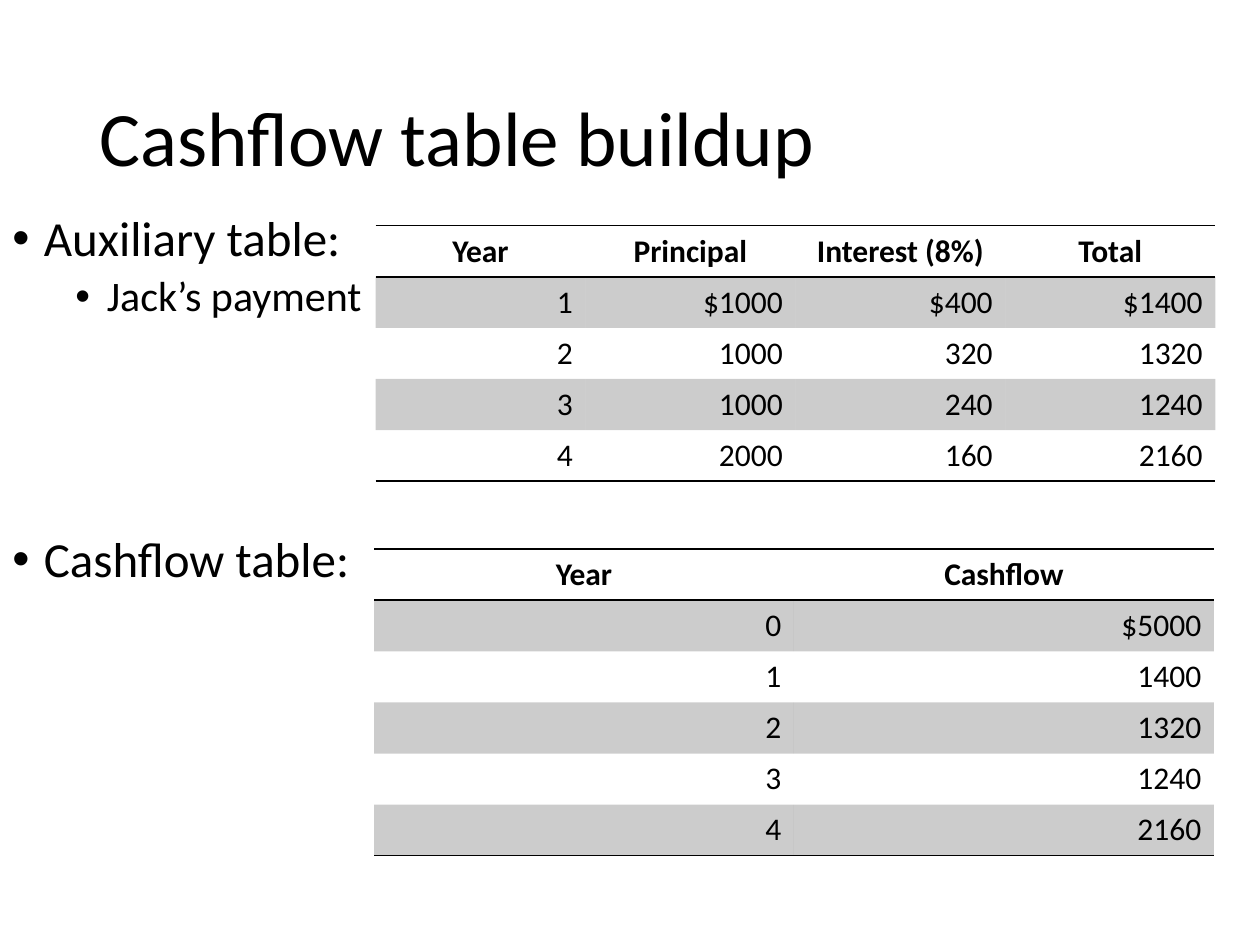
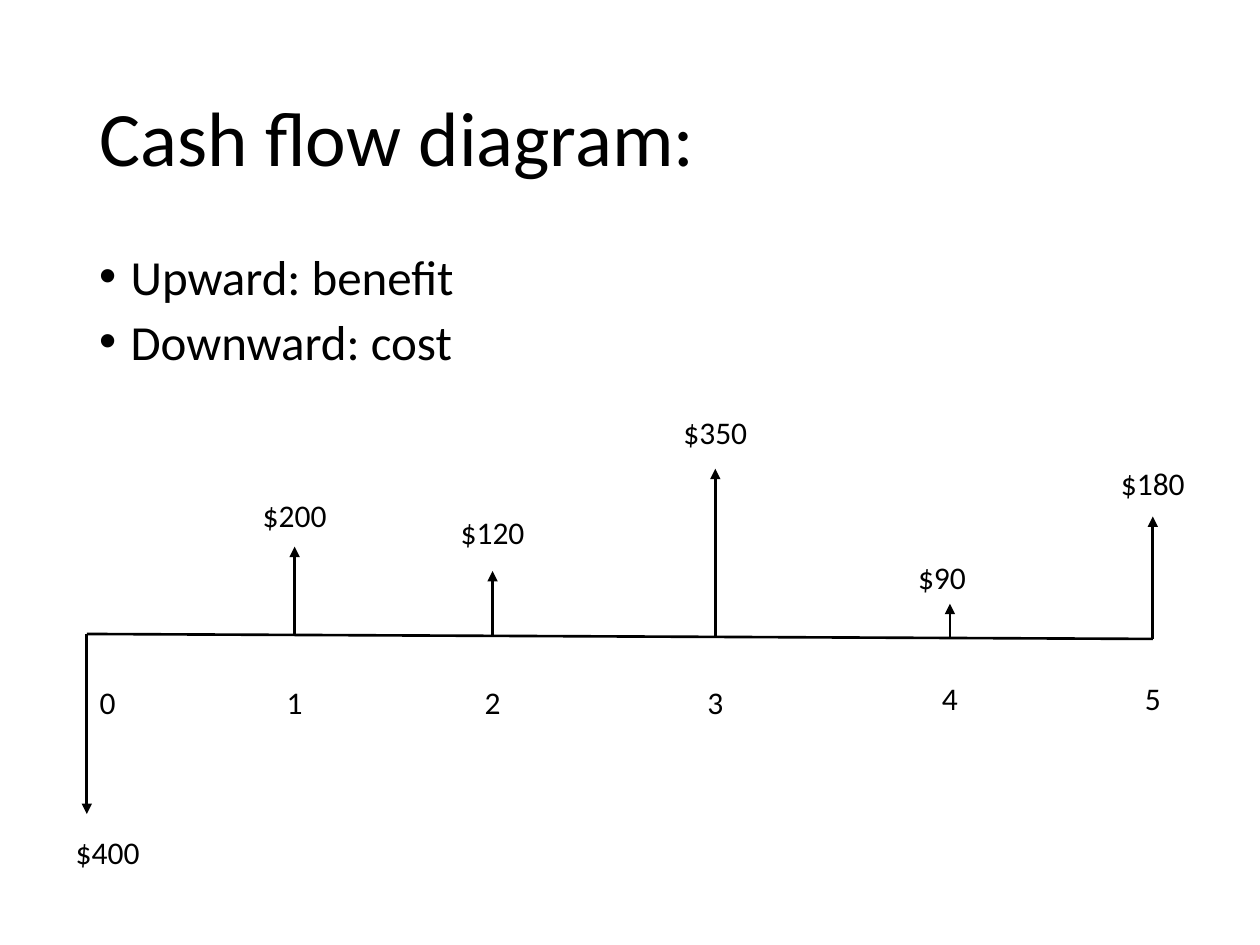
from typing import NamedTuple

from lxml import etree
from pptx import Presentation
from pptx import util as u
from pptx.dml import color
from pptx.enum import shapes, text
from pptx.oxml import ns

Cm = u.Cm
FONT = "Calibri"
COLOURS = {"ink": "000000", "paper": "FFFFFF"}
INK = color.RGBColor.from_string(COLOURS["ink"])
PLAIN_TABLE_STYLE = "{2D5ABB26-0587-4C30-8999-92F81FD0307C}"
BAND_OPACITY = 20
ROW_HEIGHT = 1.03
TABLE_WIDTH = 16.93
BODY_WIDTH = 21.9
MARGIN = 1.75


class Bullet(NamedTuple):
    words: str
    level: int = 0


class BulletList(NamedTuple):
    left: float
    top: float
    height: float
    bullets: list[Bullet]
    line_spacing: float = 0.9


class DataTable(NamedTuple):
    left: float
    top: float
    rows: list[list[str]]


class CashFlow(NamedTuple):
    year: str
    x: float
    year_top: float
    tip: float
    amount: str
    amount_top: float
    year_shift: float = 0
    amount_shift: float = 0


class Point(NamedTuple):
    x: float
    y: float


AUXILIARY_LIST = BulletList(
    0, 4.19, 3.45, [Bullet("Auxiliary table:"), Bullet("Jack’s payment", 1)])
CASHFLOW_LIST = BulletList(0, 10.67, 1.45, [Bullet("Cashflow table:")])
DIRECTION_LIST = BulletList(
    MARGIN, 5.08, 2.62, [Bullet("Upward: benefit"), Bullet("Downward: cost")], 0.8)

AUXILIARY_TABLE = DataTable(7.57, 4.55, [
    ["Year", "Principal", "Interest (8%)", "Total"],
    ["1", "$1000", "$400", "$1400"],
    ["2", "1000", "320", "1320"],
    ["3", "1000", "240", "1240"],
    ["4", "2000", "160", "2160"],
])
CASHFLOW_TABLE = DataTable(7.54, 11.07, [
    ["Year", "Cashflow"],
    ["0", "$5000"],
    ["1", "1400"],
    ["2", "1320"],
    ["3", "1240"],
    ["4", "2160"],
])

AXIS_START, AXIS_END = Point(MARGIN, 12.78), Point(23.24, 12.88)
CASH_FLOWS = [
    CashFlow("0", 1.75, 13.64, 16.41, "$400", 16.66, 0.42, 0.42),
    CashFlow("1", 5.94, 13.64, 11.02, "$200", 9.88),
    CashFlow("2", 9.93, 13.64, 11.51, "$120", 10.21),
    CashFlow("3", 14.42, 13.64, 9.45, "$350", 8.2),
    CashFlow("4", 19.15, 13.56, 12.17, "$90", 11.13, 0, -0.16),
    CashFlow("5", 23.24, 13.56, 10.41, "$180", 9.22),
]


# Text
def style_paragraph(paragraph, size: float, bold: bool = False) -> None:
    for font in (paragraph.font, *(run.font for run in paragraph.runs)):
        font.name, font.size, font.bold = FONT, u.Pt(size), bold
        font.color.rgb = INK


def add_titled_slide(presentation, words: str):
    slide = presentation.slides.add_slide(presentation.slide_layouts[5])
    slide.background.fill.solid()
    slide.background.fill.fore_color.rgb = color.RGBColor.from_string(COLOURS["paper"])
    title = slide.shapes.title
    title.left, title.top = Cm(MARGIN), Cm(1.02)
    title.width, title.height = Cm(BODY_WIDTH), Cm(3.68)
    frame = title.text_frame
    frame.text = words
    frame.auto_size = text.MSO_AUTO_SIZE.NONE
    frame.vertical_anchor = text.MSO_ANCHOR.MIDDLE
    paragraph = frame.paragraphs[0]
    paragraph.alignment = text.PP_ALIGN.LEFT
    paragraph.line_spacing = 0.9
    style_paragraph(paragraph, 44)
    return slide


def add_bullet_list(slide, item: BulletList) -> None:
    box = slide.shapes.add_textbox(
        Cm(item.left), Cm(item.top), Cm(BODY_WIDTH), Cm(item.height))
    frame = box.text_frame
    frame.word_wrap = True
    frame.text = "\n".join(bullet.words for bullet in item.bullets)
    for paragraph, bullet in zip(frame.paragraphs, item.bullets):
        paragraph.level = bullet.level
        paragraph.line_spacing = item.line_spacing
        paragraph.space_before = u.Pt(5 if bullet.level else 10)
        properties = paragraph._p.get_or_add_pPr()
        properties.set("marL", str(u.Inches(0.25 + 0.5 * bullet.level)))
        properties.set("indent", str(-u.Inches(0.25)))
        etree.SubElement(properties, ns.qn("a:buFont"), typeface="Arial")
        etree.SubElement(properties, ns.qn("a:buChar"), char="•")
        style_paragraph(paragraph, 24 if bullet.level else 28)


def add_label(slide, words: str, centre: float, top: float, width: float) -> None:
    box = slide.shapes.add_textbox(
        Cm(centre - width / 2), Cm(top), Cm(width), Cm(1.02))
    frame = box.text_frame
    frame.text = words
    frame.word_wrap = False
    frame.auto_size = text.MSO_AUTO_SIZE.SHAPE_TO_FIT_TEXT
    frame.paragraphs[0].alignment = text.PP_ALIGN.CENTER
    style_paragraph(frame.paragraphs[0], 18)


# Tables
def set_borders(cell, sides: list[str]) -> None:
    properties = cell._tc.get_or_add_tcPr()
    for position, side in enumerate(sides):
        line = etree.Element(ns.qn(f"a:ln{side}"), w=str(u.Pt(1)))
        fill = etree.SubElement(line, ns.qn("a:solidFill"))
        etree.SubElement(fill, ns.qn("a:srgbClr"), val=COLOURS["ink"])
        properties.insert(position, line)


def fill_band(cell) -> None:
    cell.fill.solid()
    cell.fill.fore_color.rgb = INK
    tint = cell._tc.tcPr.find(".//" + ns.qn("a:srgbClr"))
    etree.SubElement(tint, ns.qn("a:alpha"), val=str(BAND_OPACITY * 1000))


def add_data_table(slide, item: DataTable) -> None:
    row_count, column_count = len(item.rows), len(item.rows[0])
    frame = slide.shapes.add_table(
        row_count, column_count, Cm(item.left), Cm(item.top),
        Cm(TABLE_WIDTH), Cm(ROW_HEIGHT * row_count))
    table = frame.table
    table.horz_banding = False
    table._tbl.tblPr.find(ns.qn("a:tableStyleId")).text = PLAIN_TABLE_STYLE
    for row, values in enumerate(item.rows):
        header = row == 0
        for column, value in enumerate(values):
            cell = table.cell(row, column)
            cell.text = value
            paragraph = cell.text_frame.paragraphs[0]
            paragraph.alignment = text.PP_ALIGN.CENTER if header else text.PP_ALIGN.RIGHT
            style_paragraph(paragraph, 18, header)
            if row % 2:
                fill_band(cell)
            else:
                cell.fill.background()
            if header:
                set_borders(cell, ["T", "B"])
            elif row == row_count - 1:
                set_borders(cell, ["B"])


# Cash flow diagram
def add_line(slide, start: Point, end: Point, arrow: bool = False) -> None:
    connector = slide.shapes.add_connector(
        shapes.MSO_CONNECTOR.STRAIGHT,
        Cm(start.x), Cm(start.y), Cm(end.x), Cm(end.y))
    connector.line.color.rgb = INK
    connector.line.width = u.Pt(1.5)
    properties = connector._element.spPr
    if arrow:
        etree.SubElement(properties.find(ns.qn("a:ln")), ns.qn("a:tailEnd"), type="triangle")
    etree.SubElement(properties, ns.qn("a:effectLst"))


def axis_height(x: float) -> float:
    slope = (AXIS_END.y - AXIS_START.y) / (AXIS_END.x - AXIS_START.x)
    return AXIS_START.y + slope * (x - AXIS_START.x)


def add_cash_flow(slide, flow: CashFlow) -> None:
    add_line(slide, Point(flow.x, axis_height(flow.x)), Point(flow.x, flow.tip), arrow=True)
    add_label(slide, flow.year, flow.x + flow.year_shift, flow.year_top, 0.84)
    width = 0.6 + 0.3 * len(flow.amount)
    add_label(slide, flow.amount, flow.x + flow.amount_shift, flow.amount_top, width)


def main() -> None:
    presentation = Presentation()
    presentation.slide_width, presentation.slide_height = Cm(25.4), Cm(19.05)

    # Tables slide
    slide = add_titled_slide(presentation, "Cashflow table buildup")
    for bullet_list, data_table in (
            (AUXILIARY_LIST, AUXILIARY_TABLE), (CASHFLOW_LIST, CASHFLOW_TABLE)):
        add_bullet_list(slide, bullet_list)
        add_data_table(slide, data_table)

    # Diagram slide
    slide = add_titled_slide(presentation, "Cash flow diagram:")
    add_bullet_list(slide, DIRECTION_LIST)
    add_line(slide, AXIS_START, AXIS_END)
    for flow in CASH_FLOWS:
        add_cash_flow(slide, flow)

    presentation.save("out.pptx")


if __name__ == "__main__":
    main()
